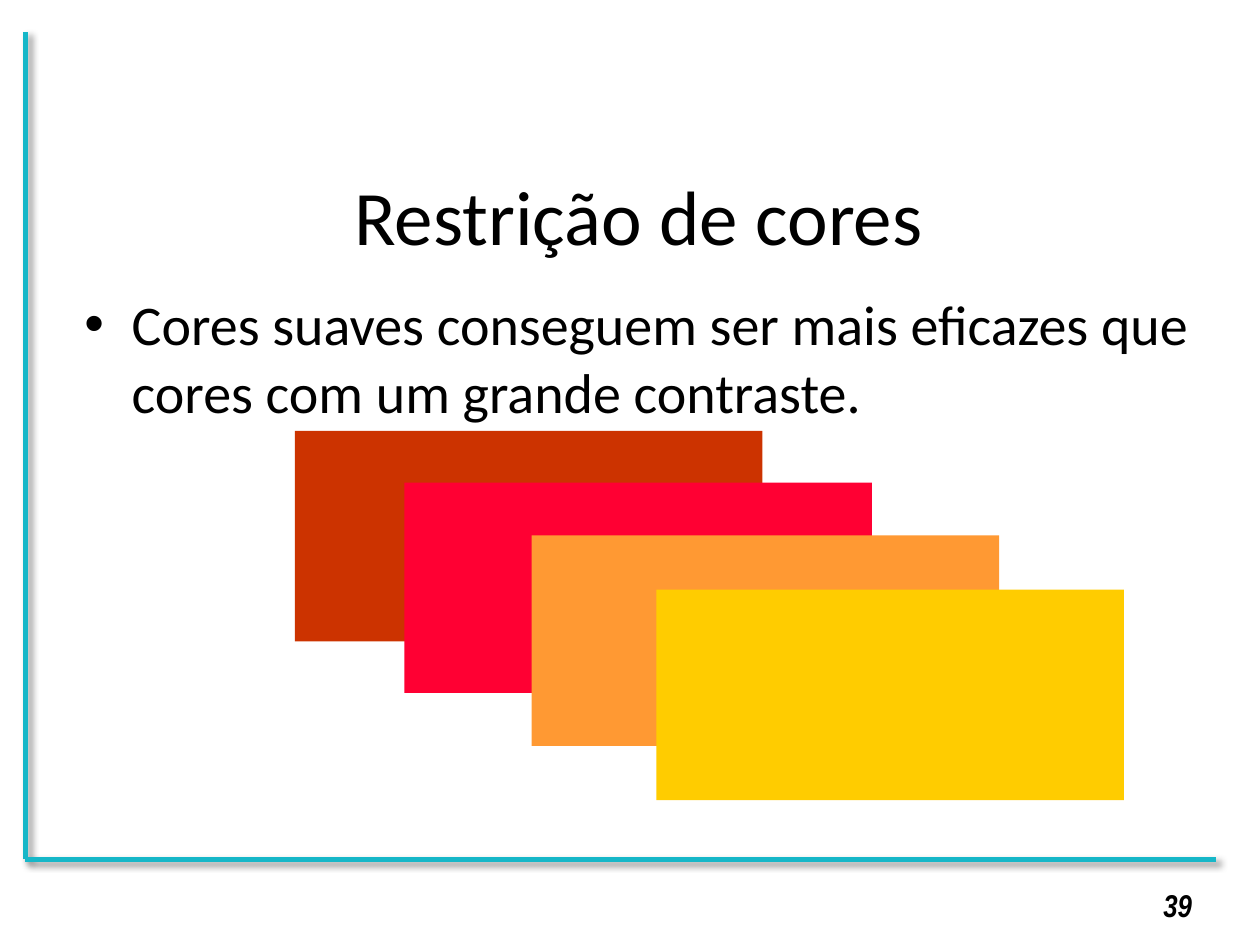
from lxml.etree import SubElement
from pptx import Presentation
from pptx.dml.color import RGBColor
from pptx.enum.shapes import MSO_CONNECTOR as Connector, MSO_SHAPE as Shape
from pptx.enum.text import MSO_ANCHOR as Anchor, MSO_AUTO_SIZE as AutoSize, PP_ALIGN as Align
from pptx.oxml.ns import qn
from pptx.util import Inches, Pt

COLORS = {
    "text": "000000",
    "frame": "16B7C8",
    "rust": "CC3300",
    "red": "FF0033",
    "orange": "FF9933",
    "yellow": "FFCC00",
}


def color(name):
    return RGBColor.from_string(COLORS[name])


def place(shape, left, top, width, height):
    shape.left, shape.top = Inches(left), Inches(top)
    shape.width, shape.height = Inches(width), Inches(height)


def write(shape, text, size, font_name, align, anchor=Anchor.TOP):
    """Put one paragraph in a shape and return its font."""
    frame = shape.text_frame
    frame.text = text
    frame.word_wrap = True
    frame.auto_size = AutoSize.NONE
    frame.vertical_anchor = anchor
    paragraph = frame.paragraphs[0]
    paragraph.alignment = align
    font = paragraph.runs[0].font
    font.name, font.size = font_name, Pt(size)
    font.color.rgb = color("text")
    return font


def add_frame_line(slide, start, end):
    """Draw a border line with a soft shadow towards the lower right."""
    points = [Inches(value) for value in (*start, *end)]
    border = slide.shapes.add_connector(Connector.STRAIGHT, *points)
    border.line.color.rgb = color("frame")
    border.line.width = Pt(3)
    effects = SubElement(border._element.spPr, qn("a:effectLst"))
    shadow = SubElement(effects, qn("a:outerShdw"), blurRad=str(Pt(4)),
                        dist=str(Pt(3)), dir=str(45 * 60000),
                        algn="tl", rotWithShape="0")
    tint = SubElement(shadow, qn("a:srgbClr"), val=COLORS["text"])
    SubElement(tint, qn("a:alpha"), val="40000")


def add_swatch(slide, left, top, fill):
    swatch = slide.shapes.add_shape(Shape.RECTANGLE, Inches(left), Inches(top),
                                    Inches(3.71), Inches(1.67))
    swatch.shadow.inherit = False
    swatch.fill.solid()
    swatch.fill.fore_color.rgb = color(fill)
    swatch.line.fill.background()


def main():
    deck = Presentation()
    deck.slide_width, deck.slide_height = Inches(10), Inches(7.5)
    slide = deck.slides.add_slide(deck.slide_layouts[1])

    # Frame and page number
    corner = (0.2, 6.82)
    for end in ((0.2, 0.25), (9.65, 6.82)):
        add_frame_line(slide, corner, end)
    page_number = slide.shapes.add_textbox(0, 0, 0, 0)
    place(page_number, 7.28, 6.98, 2.28, 0.4)
    number_font = write(page_number, "39", 18, "Arial Narrow", Align.RIGHT)
    number_font.bold = number_font.italic = True

    # Title and bullet
    title, body = slide.placeholders
    place(title, 0.57, 1.23, 9, 0.94)
    write(title, "Restrição de cores", 44, "Calibri", Align.CENTER, Anchor.MIDDLE)
    place(body, 0.57, 2.25, 9, 4.41)
    write(body, "Cores suaves conseguem ser mais eficazes que "
                "cores com um grande contraste.", 32, "Calibri", Align.LEFT)

    # Cascade of soft colours
    for left, top, fill in ((2.34, 3.42, "rust"), (3.21, 3.83, "red"),
                            (4.22, 4.25, "orange"), (5.21, 4.68, "yellow")):
        add_swatch(slide, left, top, fill)

    deck.save("out.pptx")


if __name__ == "__main__":
    main()
